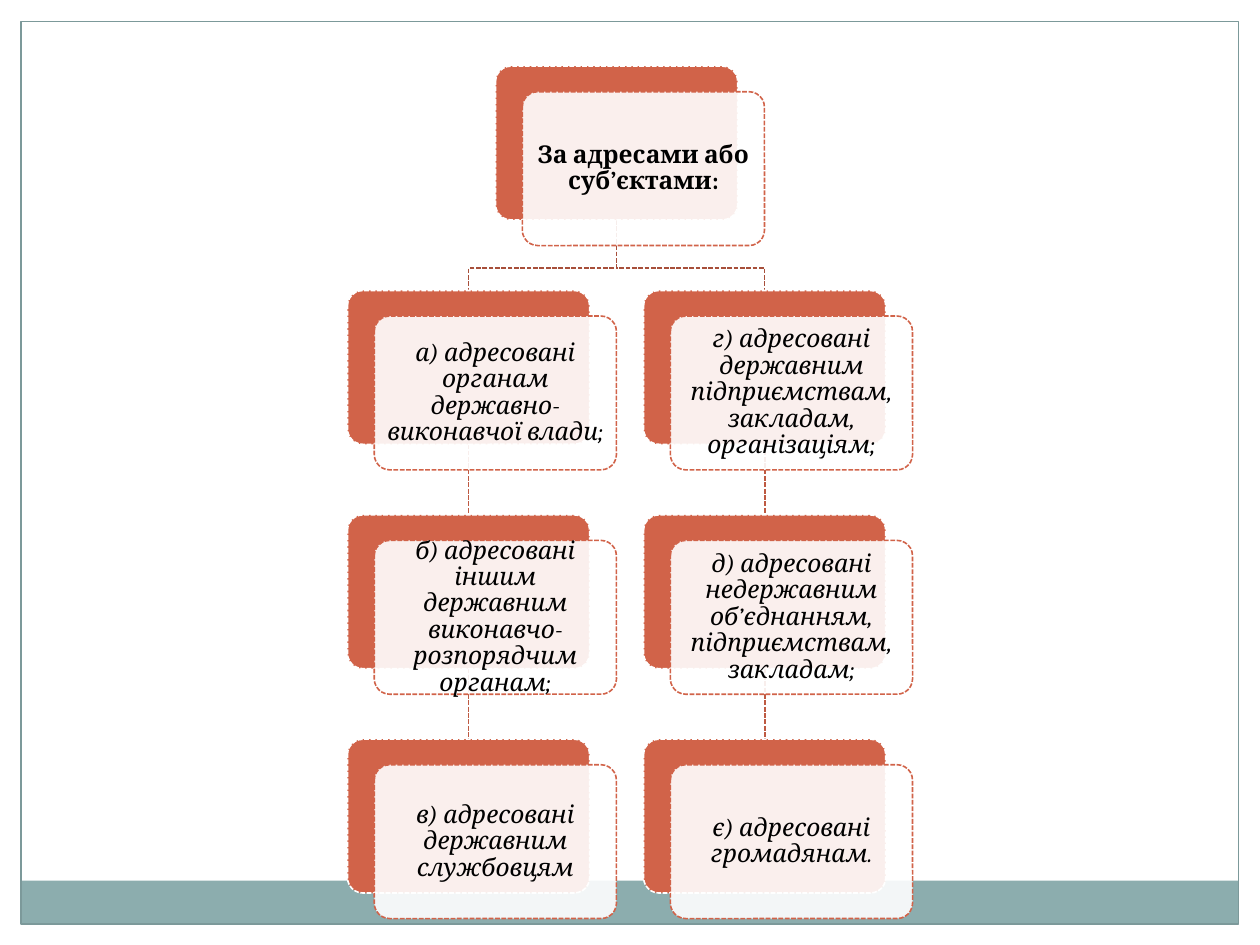
import pptx
import pptx.util
import pptx.dml.color
import pptx.enum.dml
import pptx.enum.shapes
import pptx.enum.text
import pptx.oxml
import pptx.oxml.ns

Pt = pptx.util.Pt
RGBColor = pptx.dml.color.RGBColor
MSO_SHAPE = pptx.enum.shapes.MSO_SHAPE

WHITE = RGBColor(0xFF, 0xFF, 0xFF)
BLACK = RGBColor(0x00, 0x00, 0x00)
TEAL = RGBColor(0x8C, 0xAD, 0xAE)
FRAME = RGBColor(0x7C, 0x99, 0x9A)
ORANGE = RGBColor(0xD1, 0x63, 0x49)
BRANCH = RGBColor(0xA7, 0x4F, 0x3A)
LINK = RGBColor(0xBE, 0x5A, 0x42)

CARD_W, CARD_H = 138.4, 87.9
COLUMN_STEP, ROW_STEP = 169.2, 128.2
SHIFT_X, SHIFT_Y = 15.3, 14.6
BEND = 12.8

ROOT = "За адресами або суб’єктами:"
COLUMNS = [
    [
        "а) адресовані органам державно-виконавчої влади;",
        "б) адресовані іншим державним виконавчо-розпорядчим органам;",
        "в) адресовані державним службовцям",
    ],
    [
        "г) адресовані державним підприємствам, закладам, організаціям;",
        "д) адресовані недержавним об’єднанням, підприємствам, закладам;",
        "є) адресовані громадянам.",
    ],
]


def dash(sp, color):
    sp.line.color.rgb = color
    sp.line.width = Pt(0.9)
    # SQUARE_DOT is written as sysDash
    sp.line.dash_style = pptx.enum.dml.MSO_LINE.SQUARE_DOT


def add_box(s, kind, x, y, w, h, fill=None):
    sp = s.shapes.add_shape(kind, Pt(x), Pt(y), Pt(w), Pt(h))
    sp.shadow.inherit = False
    if fill is None:
        sp.fill.background()
    else:
        sp.fill.solid()
        sp.fill.fore_color.rgb = fill
    sp.line.fill.background()
    return sp


def add_frame(s, x, y, w, h):
    """Thin border with a teal band along its bottom edge."""
    band_h = 24.8
    add_box(s, MSO_SHAPE.RECTANGLE, x, y + h - band_h, w, band_h, TEAL)
    border = add_box(s, MSO_SHAPE.RECTANGLE, x, y, w, h)
    border.line.color.rgb = FRAME
    border.line.width = Pt(0.75)


def add_link(s, x, top, bottom):
    line = s.shapes.add_connector(
        pptx.enum.shapes.MSO_CONNECTOR.STRAIGHT, Pt(x), Pt(top), Pt(x), Pt(bottom))
    dash(line, LINK)
    line._element.spPr.append(pptx.oxml.parse_xml(
        f'<a:effectLst {pptx.oxml.ns.nsdecls("a")}/>'))


def add_branch(s, x1, y1, x2, y2):
    """Bent line from a parent's bottom centre to a child's top centre."""
    bend = y2 - BEND
    fb = s.shapes.build_freeform(Pt(x1), Pt(y1))
    fb.add_line_segments(
        [(Pt(x1), Pt(bend)), (Pt(x2), Pt(bend)), (Pt(x2), Pt(y2))], close=False)
    sp = fb.convert_to_shape()
    sp.shadow.inherit = False
    sp.fill.background()
    dash(sp, BRANCH)


def add_card(s, x, y, text, bold=False):
    """Solid back plate with a translucent text plate shifted over it."""
    back = add_box(s, MSO_SHAPE.ROUNDED_RECTANGLE, x, y, CARD_W, CARD_H, ORANGE)
    front = add_box(s, MSO_SHAPE.ROUNDED_RECTANGLE,
                    x + SHIFT_X, y + SHIFT_Y, CARD_W, CARD_H, WHITE)
    for sp, color in ((back, WHITE), (front, ORANGE)):
        sp.adjustments[0] = 0.1
        dash(sp, color)
    srgb = front._element.spPr.find(".//" + pptx.oxml.ns.qn("a:srgbClr"))
    srgb.append(pptx.oxml.parse_xml(
        f'<a:alpha {pptx.oxml.ns.nsdecls("a")} val="90000"/>'))

    tf = front.text_frame
    tf.word_wrap = True
    tf.vertical_anchor = pptx.enum.text.MSO_ANCHOR.MIDDLE
    tf.margin_left = tf.margin_right = tf.margin_top = tf.margin_bottom = Pt(1.7)
    p = tf.paragraphs[0]
    p.alignment = pptx.enum.text.PP_ALIGN.CENTER
    p.line_spacing = 0.9
    r = p.add_run()
    r.text = text
    r.font.name = "Cambria"
    r.font.size = Pt(14)
    r.font.bold = bold
    r.font.italic = not bold
    r.font.color.rgb = BLACK


def add_hierarchy(s, x, y):
    """Root card centred over columns of linked cards."""
    root_x = x + COLUMN_STEP * (len(COLUMNS) - 1) / 2
    lefts = [x + COLUMN_STEP * i for i in range(len(COLUMNS))]
    half = CARD_W / 2

    for left, texts in zip(lefts, COLUMNS):
        for row in range(1, len(texts)):
            top = y + ROW_STEP * row
            add_link(s, left + half, top + CARD_H, top + ROW_STEP)
        add_branch(s, root_x + half, y + CARD_H, left + half, y + ROW_STEP)

    add_card(s, root_x, y, ROOT, bold=True)
    for left, texts in zip(lefts, COLUMNS):
        for row, text in enumerate(texts, 1):
            add_card(s, left, y + ROW_STEP * row, text)


def main():
    prs = pptx.Presentation()
    prs.slide_width, prs.slide_height = Pt(720), Pt(540)
    s = prs.slides.add_slide(prs.slide_layouts[6])
    add_frame(s, 12, 12.2, 695.6, 515.8)
    add_hierarchy(s, 198.6, 37.8)
    prs.save("out.pptx")


if __name__ == "__main__":
    main()
